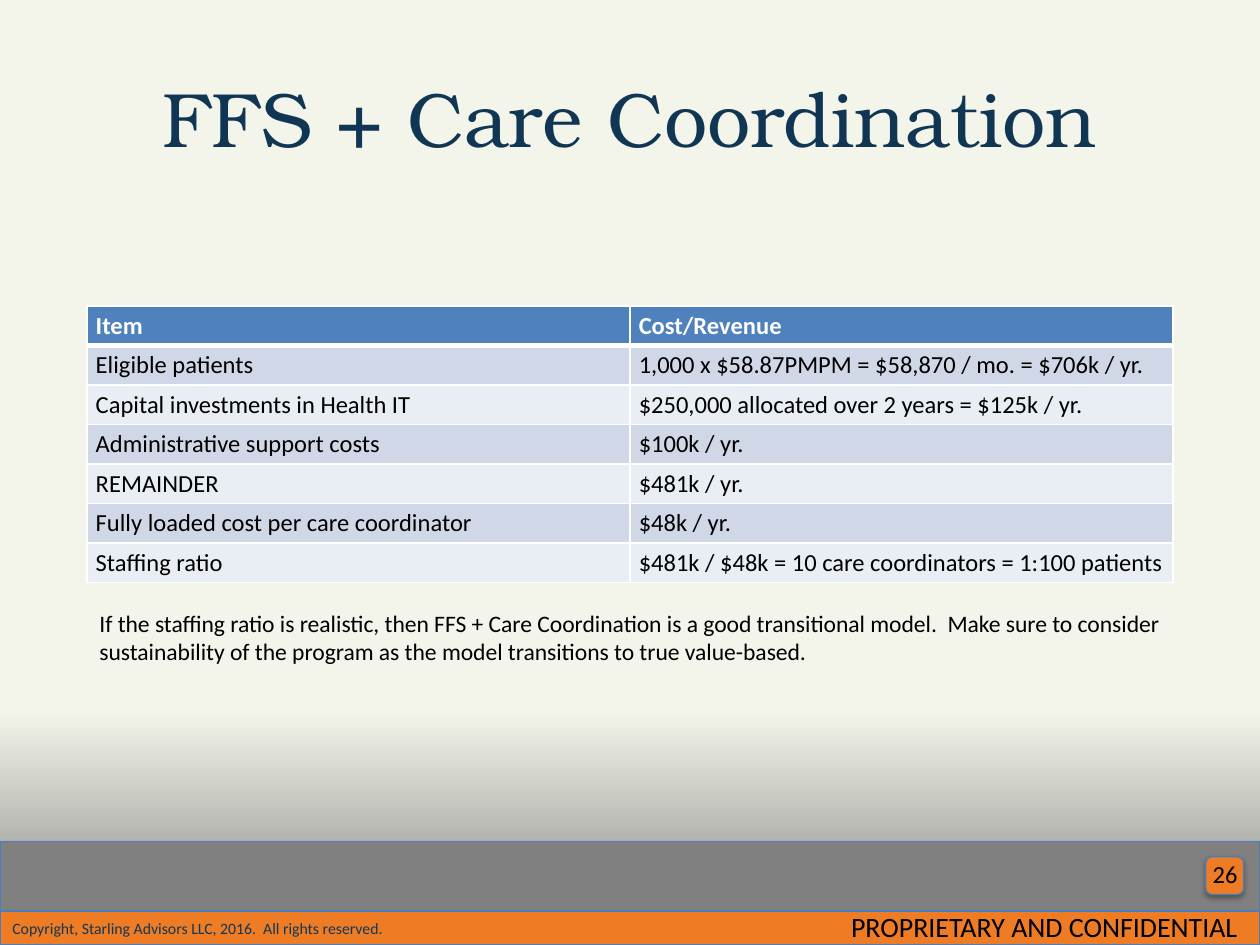
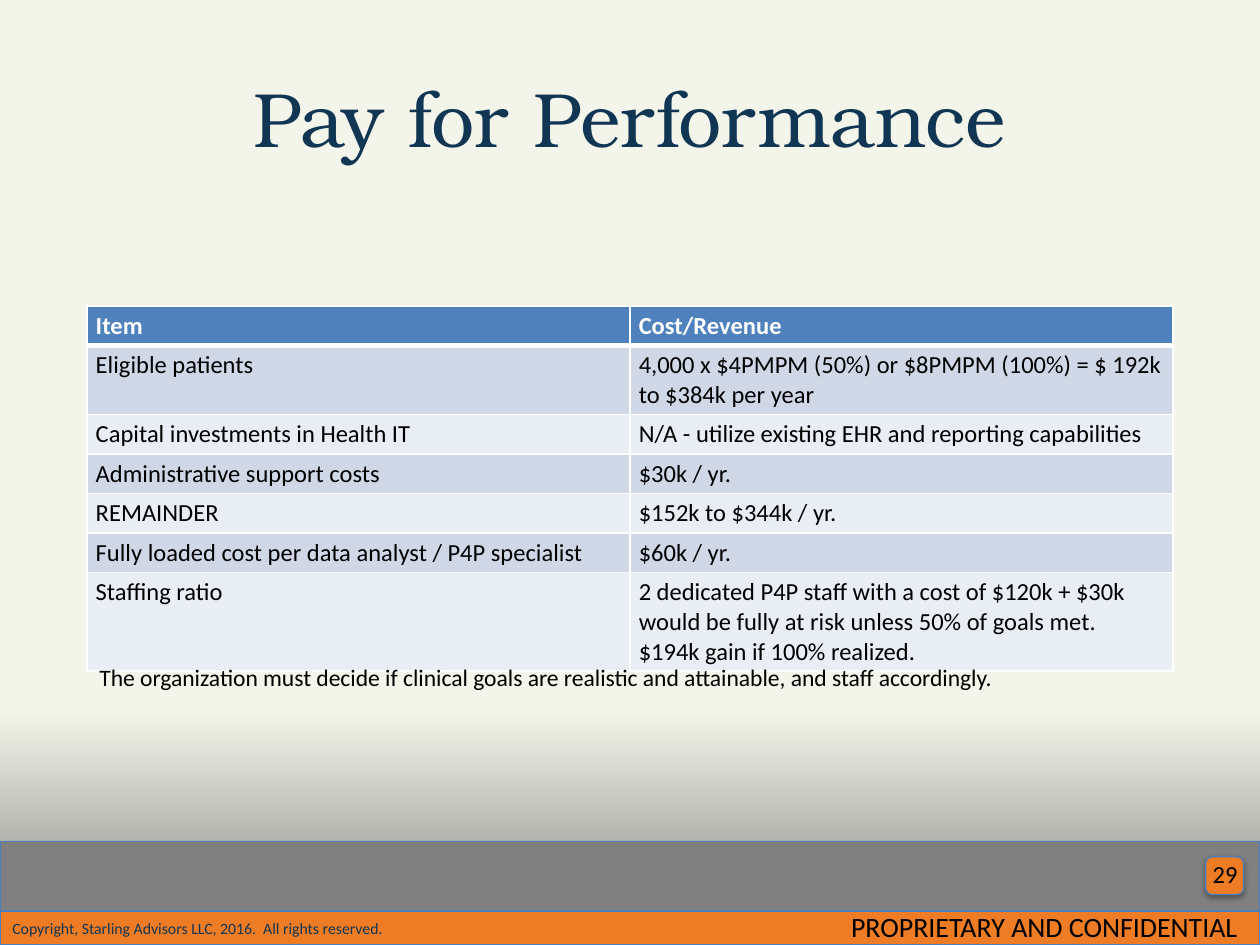
import lxml.etree
import pptx
import pptx.dml.color
import pptx.enum.shapes
import pptx.enum.text
import pptx.oxml.ns
import pptx.util

Inches, Pt = pptx.util.Inches, pptx.util.Pt
SHAPE = pptx.enum.shapes.MSO_SHAPE
ALIGN = pptx.enum.text.PP_ALIGN
ANCHOR = pptx.enum.text.MSO_ANCHOR
qn = pptx.oxml.ns.qn

CREAM, GRAY, ORANGE, NAVY = "F4F5EA", "808080", "EE7C25", "113654"
EDGE, BLUE, BLACK, WHITE = "4B7EBC", "4F81BD", "000000", "FFFFFF"
BANDS = "D0D8E8", "E9EDF4"
BODY, SERIF = "Calibri", "TeX Gyre Bonum"

PAGE = 0, 0, 10, 7.5
TITLE = 0.5, 0.3, 9, 1.25
FOOT = 0, 6.68, 10, 0.82
LEFT, TOP, WIDE = 0.69, 2.43, 8.62
LINE = 0.3

SLIDES = [
    dict(
        number=26,
        title="FFS + Care Coordination",
        rows=[
            ("Eligible patients", "1,000 x $58.87PMPM = $58,870 / mo. = $706k / yr."),
            ("Capital investments in Health IT",
             "$250,000 allocated over 2 years = $125k / yr."),
            ("Administrative support costs", "$100k / yr."),
            ("REMAINDER", "$481k / yr."),
            ("Fully loaded cost per care coordinator", "$48k / yr."),
            ("Staffing ratio", "$481k / $48k = 10 care coordinators = 1:100 patients"),
        ],
        tall={},
        note="If the staffing ratio is realistic, then FFS + Care Coordination is a "
             "good transitional model.  Make sure to consider sustainability of the "
             "program as the model transitions to true value-based.",
        place=(LEFT, 4.78, WIDE, 0.56),
    ),
    dict(
        number=29,
        title="Pay for Performance",
        rows=[
            ("Eligible patients",
             "4,000 x $4PMPM (50%) or $8PMPM (100%) = $ 192k to $384k per year"),
            ("Capital investments in Health IT",
             "N/A - utilize existing EHR and reporting capabilities"),
            ("Administrative support costs", "$30k / yr."),
            ("REMAINDER", "$152k to $344k / yr."),
            ("Fully loaded cost per data analyst / P4P specialist", "$60k / yr."),
            ("Staffing ratio",
             "2 dedicated P4P staff with a cost of $120k + $30k would be fully at risk "
             "unless 50% of goals met.  $194k gain if 100% realized."),
        ],
        tall={1: 0.53, 6: 0.75},
        note="The organization must decide if clinical goals are realistic and "
             "attainable, and staff accordingly.",
        place=(LEFT, 5.21, WIDE, 0.33),
    ),
]


def color(code):
    return pptx.dml.color.RGBColor.from_string(code)


def paint(fill, code):
    fill.solid()
    fill.fore_color.rgb = color(code)


def write(frame, text, size, code=BLACK, face=BODY, bold=False, align=ALIGN.LEFT):
    frame.word_wrap = True
    par = frame.paragraphs[0]
    par.alignment = align
    run = par.add_run()
    run.text = text
    for name, value in dict(size=Pt(size), name=face, bold=bold).items():
        setattr(run.font, name, value)
    run.font.color.rgb = color(code)


def label(slide, box, text, size, anchor=ANCHOR.TOP, **style):
    frame = slide.shapes.add_textbox(*map(Inches, box)).text_frame
    frame.vertical_anchor = anchor
    write(frame, text, size, **style)


def shade(shape):
    """Give the shape a soft shadow that falls straight down."""
    shape.shadow.inherit = False
    effects = shape._element.spPr.find(qn("a:effectLst"))
    outer = lxml.etree.SubElement(
        effects, qn("a:outerShdw"), blurRad=str(Pt(3.1)), dist=str(Pt(1.8)),
        dir="5400000", rotWithShape="0")
    tint = lxml.etree.SubElement(outer, qn("a:srgbClr"), val=BLACK)
    lxml.etree.SubElement(tint, qn("a:alpha"), val="35000")


def block(slide, kind, box, code):
    shape = slide.shapes.add_shape(kind, *map(Inches, box))
    paint(shape.fill, code)
    shape.line.color.rgb = color(EDGE)
    shape.line.width = Pt(0.75)
    shade(shape)
    return shape


def backdrop(slide):
    fill = slide.background.fill
    fill.gradient()
    fill.gradient_angle = 270
    for stop, place, code in zip(fill.gradient_stops, (0.75, 1), (CREAM, GRAY)):
        stop.position = place
        stop.color.rgb = color(code)


def footer(slide, box, number):
    x, y, w, h = box
    right = x + w - 0.08
    block(slide, SHAPE.RECTANGLE, box, GRAY)
    strip = block(slide, SHAPE.RECTANGLE, (x, y + 0.55, w, h - 0.55), ORANGE)
    strip.text_frame.vertical_anchor = ANCHOR.MIDDLE
    write(strip.text_frame,
          "Copyright, Starling Advisors LLC, 2016.  All rights reserved.", 9, NAVY)
    block(slide, SHAPE.ROUNDED_RECTANGLE, (right - 0.35, y + 0.12, 0.3, 0.3), ORANGE)
    label(slide, (right - 0.52, y + 0.09, 0.52, 0.4), str(number), 14,
          align=ALIGN.RIGHT)
    label(slide, (right - 4.48, y + 0.49, 4.48, 0.37),
          "PROPRIETARY AND CONFIDENTIAL", 16, align=ALIGN.RIGHT)


def border(cell, widths):
    """Draw white cell edges; widths are left, right, top, bottom in points."""
    props = cell._tc.get_or_add_tcPr()
    for spot, (side, width) in enumerate(zip("LRTB", widths)):
        edge = lxml.etree.Element(qn("a:ln" + side), w=str(Pt(width)))
        fill = lxml.etree.SubElement(edge, qn("a:solidFill"))
        lxml.etree.SubElement(fill, qn("a:srgbClr"), val=WHITE)
        props.insert(spot, edge)


def costs(slide, box, rows, tall):
    """Add the cost table; tall maps a row to its height if above one line."""
    x, y, w = box
    rows = [("Item", "Cost/Revenue"), *rows]
    sizes = [tall.get(r, LINE) for r in range(len(rows))]
    table = slide.shapes.add_table(
        len(rows), 2, *map(Inches, (x, y, w, sum(sizes)))).table
    for col in table.columns:
        col.width = Inches(w / 2)
    pads = dict(margin_left=0.07, margin_right=0.07, margin_top=0.04,
                margin_bottom=0.04)
    for r, texts in enumerate(rows):
        table.rows[r].height = Inches(sizes[r])
        head = r == 0
        for c, text in enumerate(texts):
            cell = table.cell(r, c)
            for name, value in pads.items():
                setattr(cell, name, Inches(value))
            write(cell.text_frame, text, 14, WHITE if head else BLACK, bold=head)
            paint(cell.fill, BLUE if head else BANDS[(r - 1) % 2])
            border(cell, (1, 1, 3 if r == 1 else 1, 3 if head else 1))


def model(slide, number, title, rows, tall, note, place):
    """Fill one payment model slide."""
    backdrop(slide)
    footer(slide, FOOT, number)
    label(slide, TITLE, title, 44, ANCHOR.MIDDLE, code=NAVY, face=SERIF,
          align=ALIGN.CENTER)
    costs(slide, (LEFT, TOP, WIDE), rows, tall)
    label(slide, place, note, 13.5)


def main():
    deck = pptx.Presentation()
    deck.slide_width, deck.slide_height = map(Inches, PAGE[2:])
    for parts in SLIDES:
        model(deck.slides.add_slide(deck.slide_layouts[6]), **parts)
    deck.save("out.pptx")


if __name__ == "__main__":
    main()
